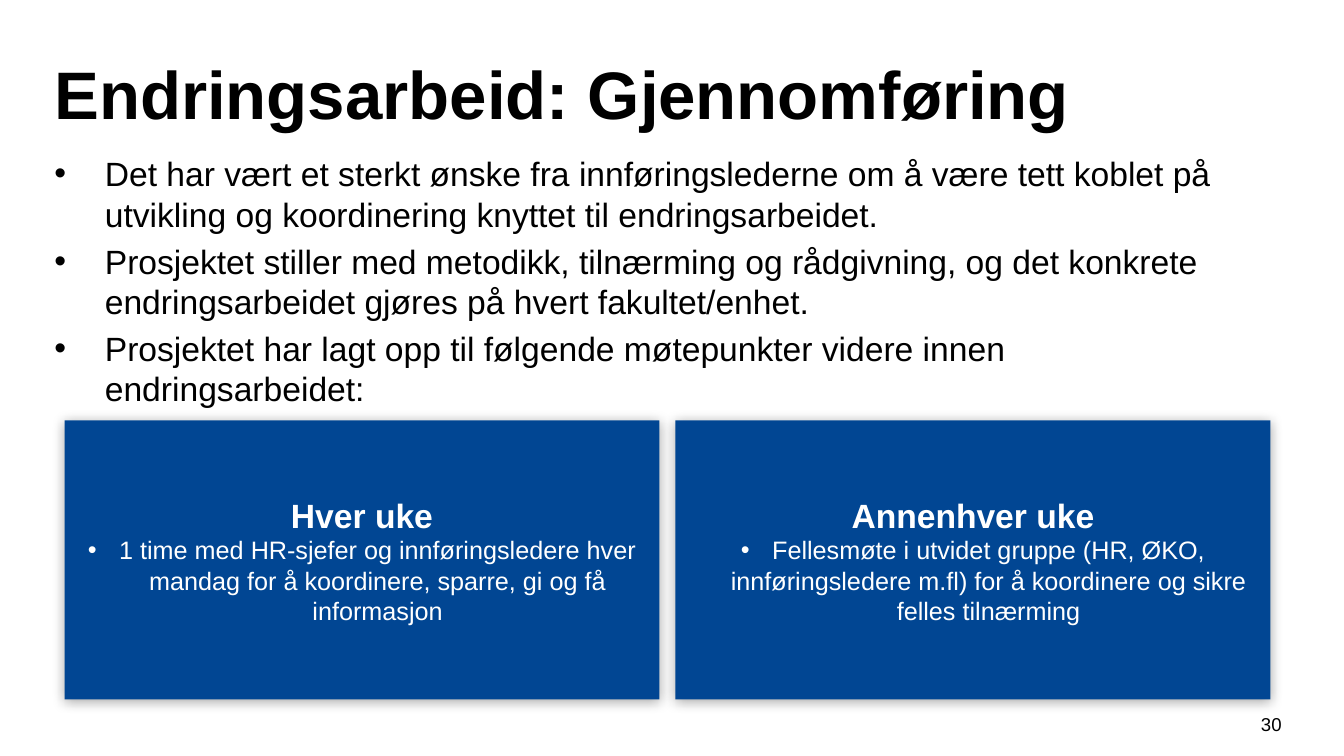
from dataclasses import dataclass

from lxml.etree import SubElement
from pptx import Presentation
from pptx.dml.color import RGBColor
from pptx.enum.shapes import MSO_SHAPE
from pptx.enum.text import MSO_ANCHOR, MSO_AUTO_SIZE, PP_ALIGN
from pptx.oxml.ns import qn
from pptx.shapes.autoshape import Shape
from pptx.slide import Slide
from pptx.text.text import _Paragraph
from pptx.util import Emu, Pt

PX = 9144  # 100 px to the inch
BLACK = RGBColor(0x00, 0x00, 0x00)
WHITE = RGBColor(0xFF, 0xFF, 0xFF)
BLUE = RGBColor(0x01, 0x46, 0x93)
FONT = "Arial"

HEADING = "Endringsarbeid: Gjennomføring"
POINTS = [
    "Det har vært et sterkt ønske fra innføringslederne om å være tett koblet på "
    "utvikling og koordinering knyttet til endringsarbeidet.",
    "Prosjektet stiller med metodikk, tilnærming og rådgivning, og det konkrete "
    "endringsarbeidet gjøres på hvert fakultet/enhet.",
    "Prosjektet har lagt opp til følgende møtepunkter videre innen endringsarbeidet:",
]


@dataclass(frozen=True)
class Meeting:
    frequency: str
    agenda: str


MEETINGS = [
    Meeting("Hver uke",
            "1 time med HR-sjefer og innføringsledere hver mandag for å koordinere, "
            "sparre, gi og få informasjon"),
    Meeting("Annenhver uke",
            "Fellesmøte i utvidet gruppe (HR, ØKO, innføringsledere m.fl) for å "
            "koordinere og sikre felles tilnærming"),
]
CARD_LEFT, CARD_TOP, CARD_WIDTH, CARD_HEIGHT, CARD_PITCH = 64, 417, 590, 277, 606


def px(length: int) -> Emu:
    return Emu(length * PX)


def place(shape: Shape, left: int, top: int, width: int, height: int) -> None:
    shape.left, shape.top = px(left), px(top)
    shape.width, shape.height = px(width), px(height)


def style(paragraph: _Paragraph, size: float, color: RGBColor,
          align: PP_ALIGN = PP_ALIGN.LEFT, bold: bool = False) -> None:
    paragraph.alignment = align
    for run in paragraph.runs:
        run.font.name = FONT
        run.font.size = Pt(size)
        run.font.bold = bold
        run.font.color.rgb = color


def add_bullet(paragraph: _Paragraph, indent: int) -> None:
    properties = paragraph._p.get_or_add_pPr()
    properties.set("marL", str(px(indent)))
    properties.set("indent", str(-px(indent)))
    SubElement(properties, qn("a:buFont"), typeface=FONT)
    SubElement(properties, qn("a:buChar"), char="•")


def add_soft_shadow(shape: Shape) -> None:
    shape.shadow.inherit = False
    effects = shape._element.spPr.find(qn("a:effectLst"))
    shadow = SubElement(effects, qn("a:outerShdw"), blurRad=str(Pt(9)),
                        dist=str(Pt(1)), dir="5400000", rotWithShape="0")
    color = SubElement(shadow, qn("a:srgbClr"), val=str(BLACK))
    SubElement(color, qn("a:alpha"), val="35000")


def add_heading(slide: Slide) -> None:
    title = slide.shapes.title
    place(title, 44, 44, 1228, 95)
    frame = title.text_frame
    frame.text = HEADING
    frame.auto_size = MSO_AUTO_SIZE.NONE
    frame.vertical_anchor = MSO_ANCHOR.MIDDLE
    style(frame.paragraphs[0], 48, BLACK, bold=True)


def add_points(slide: Slide) -> None:
    body = slide.placeholders[1]
    place(body, 44, 147, 1228, 251)
    frame = body.text_frame
    frame.text = "\n".join(POINTS)
    frame.auto_size = MSO_AUTO_SIZE.NONE
    for index, paragraph in enumerate(frame.paragraphs):
        paragraph.space_before = Pt(4.8 if index else 0)
        add_bullet(paragraph, 50)
        style(paragraph, 24, BLACK)


def add_meeting(slide: Slide, meeting: Meeting, left: int) -> None:
    card = slide.shapes.add_shape(MSO_SHAPE.RECTANGLE, px(left), px(CARD_TOP),
                                  px(CARD_WIDTH), px(CARD_HEIGHT))
    card.fill.solid()
    card.fill.fore_color.rgb = BLUE
    card.line.fill.background()
    add_soft_shadow(card)
    frame = card.text_frame
    frame.word_wrap = True
    frame.vertical_anchor = MSO_ANCHOR.MIDDLE
    frame.text = f"{meeting.frequency}\n{meeting.agenda}"
    frequency, agenda = frame.paragraphs
    style(frequency, 24, WHITE, PP_ALIGN.CENTER, bold=True)
    add_bullet(agenda, 31)
    style(agenda, 18, WHITE, PP_ALIGN.CENTER)


def add_page_number(slide: Slide) -> None:
    page_number = slide.shapes.add_textbox(px(1236), px(702), px(50), px(40))
    frame = page_number.text_frame
    frame.word_wrap = True
    frame.text = "30"
    style(frame.paragraphs[0], 13.3, BLACK, PP_ALIGN.CENTER)


def main() -> None:
    presentation = Presentation()
    presentation.slide_width, presentation.slide_height = px(1333), px(750)
    slide = presentation.slides.add_slide(presentation.slide_layouts[1])
    add_heading(slide)
    add_points(slide)
    for column, meeting in enumerate(MEETINGS):
        add_meeting(slide, meeting, CARD_LEFT + column * CARD_PITCH)
    add_page_number(slide)
    presentation.save("out.pptx")


if __name__ == "__main__":
    main()
